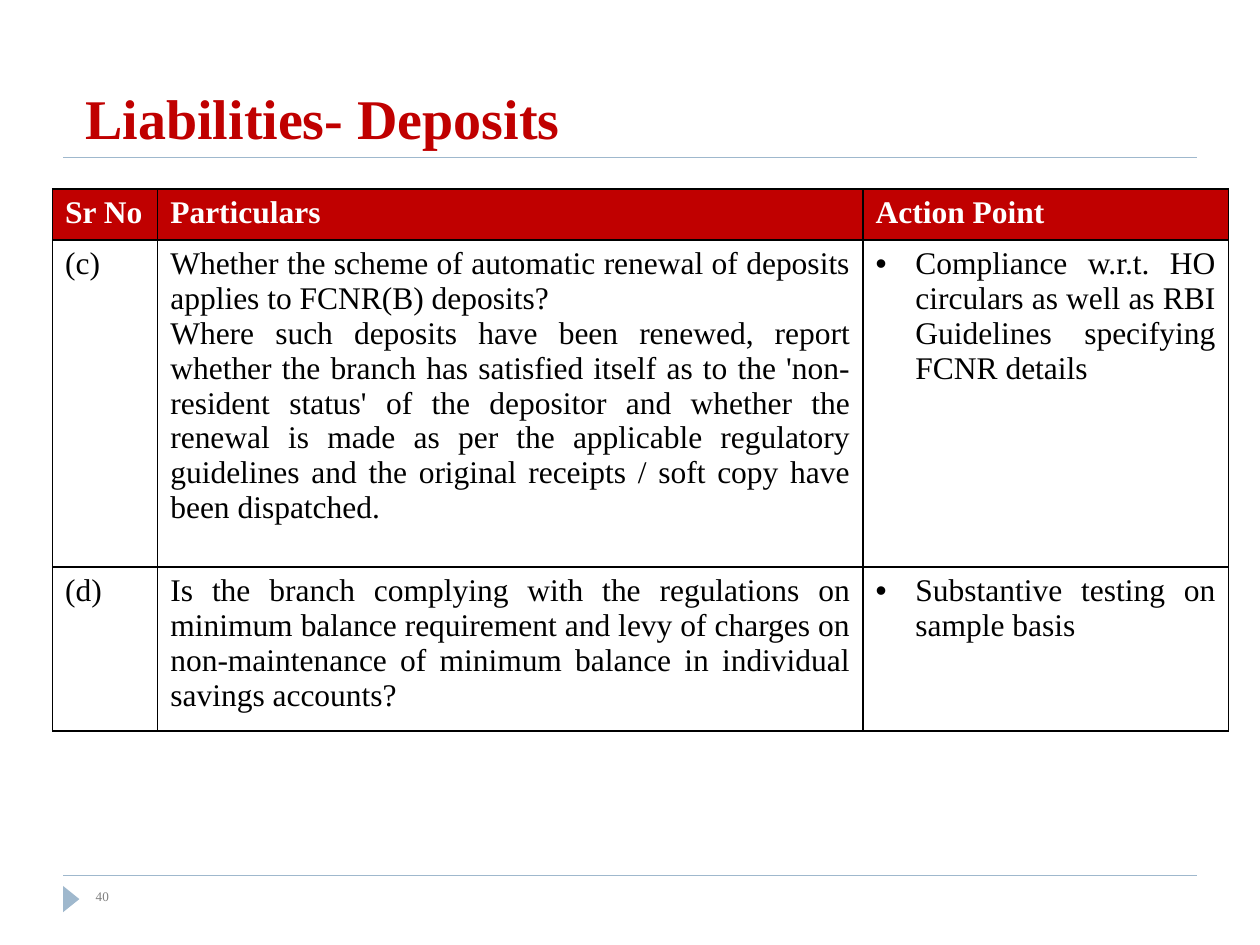
from dataclasses import dataclass

from lxml import etree
from pptx import Presentation
from pptx import util as u
from pptx.dml.color import RGBColor
from pptx.enum import shapes, text
from pptx.oxml import ns


@dataclass(frozen=True)
class Theme:
    font: str = "Times New Roman"
    red: str = "C00000"
    white: str = "FFFFFF"
    black: str = "000000"
    grey: str = "808080"
    rule: str = "9FB8CD"
    title_size: float = 32
    body_size: float = 18
    number_size: float = 7.5


theme = Theme()


def add_run(para, words, size, color, bold=False):
    span = para.add_run()
    span.text = words
    span.font.name = theme.font
    span.font.size = u.Pt(size)
    span.font.bold = bold
    span.font.color.rgb = RGBColor.from_string(color)


def add_borders(cell):
    props = cell._tc.get_or_add_tcPr()
    for side in ("lnL", "lnR", "lnT", "lnB"):
        edge = etree.SubElement(props, ns.qn(f"a:{side}"), w=str(u.Pt(1)))
        fill = etree.SubElement(edge, ns.qn("a:solidFill"))
        etree.SubElement(fill, ns.qn("a:srgbClr"), val=theme.black)


deck = Presentation()
deck.slide_width, deck.slide_height = u.Cm(25.4), u.Cm(19.05)
page = deck.slides.add_slide(deck.slide_layouts[5])

# Rules under the title and above the footer
for y in (17.65, 3.18):
    rule = page.shapes.add_connector(
        shapes.MSO_CONNECTOR.STRAIGHT, u.Cm(1.27), u.Cm(y), u.Cm(24.13), u.Cm(y))
    rule.line.color.rgb = RGBColor.from_string(theme.rule)
    rule.line.width = u.Pt(0.75)
    etree.SubElement(rule._element.spPr, ns.qn("a:effectLst"))

# Footer marker and page number
marker = page.shapes.add_shape(
    shapes.MSO_SHAPE.ISOSCELES_TRIANGLE, u.Cm(1.17), u.Cm(17.96), u.Cm(0.53), u.Cm(0.33))
marker.rotation = 90
marker.shadow.inherit = False
marker.fill.solid()
marker.fill.fore_color.rgb = RGBColor.from_string(theme.rule)
marker.line.fill.background()

number_box = page.shapes.add_textbox(u.Cm(1.68), u.Cm(17.78), u.Cm(11), u.Cm(0.76))
number_box.text_frame.word_wrap = True
add_run(number_box.text_frame.paragraphs[0], "40", theme.number_size, theme.grey)

# Title
title = page.shapes.title
title.left, title.top, title.width, title.height = u.Cm(1.47), u.Cm(0.43), u.Cm(22.86), u.Cm(2.74)
title.text_frame.vertical_anchor = text.MSO_ANCHOR.BOTTOM
title_para = title.text_frame.paragraphs[0]
title_para.alignment = text.PP_ALIGN.LEFT
add_run(title_para, "Liabilities- Deposits", theme.title_size, theme.red, bold=True)

# Table: each cell is a list of paragraphs
rows = [
    [["Sr No"], ["Particulars"], ["Action Point"]],
    [["(c)"],
     ["Whether the scheme of automatic renewal of deposits applies to FCNR(B) deposits?",
      "Where such deposits have been renewed, report whether the branch has satisfied "
      "itself as to the 'non-resident status' of the depositor and whether the renewal "
      "is made as per the applicable regulatory guidelines and the original receipts / "
      "soft copy have been dispatched."],
     ["Compliance w.r.t. HO circulars as well as RBI Guidelines specifying FCNR details"]],
    [["(d)"],
     ["Is the branch complying with the regulations on minimum balance requirement and "
      "levy of charges on non-maintenance of minimum balance in individual savings accounts?"],
     ["Substantive testing on sample basis"]],
]
widths = [2.12, 14.22, 7.36]
heights = [1.03, 6.59, 3.06]
action_column = len(widths) - 1
indent = u.Cm(0.8)

table = page.shapes.add_table(
    len(rows), len(widths), u.Cm(1.06), u.Cm(3.81), u.Cm(sum(widths)), u.Cm(sum(heights))).table
for column, width in zip(table.columns, widths):
    column.width = u.Cm(width)
for row, height in zip(table.rows, heights):
    row.height = u.Cm(height)

for r, row in enumerate(rows):
    header = r == 0
    for c, paragraphs in enumerate(row):
        cell = table.cell(r, c)
        add_borders(cell)
        if header:
            cell.fill.solid()
            cell.fill.fore_color.rgb = RGBColor.from_string(theme.red)
        else:
            cell.fill.background()
        for i, words in enumerate(paragraphs):
            frame = cell.text_frame
            para = frame.paragraphs[0] if i == 0 else frame.add_paragraph()
            para.alignment = text.PP_ALIGN.JUSTIFY
            if c == action_column and not header:
                props = para._p.get_or_add_pPr()
                props.set("marL", str(indent))
                props.set("indent", str(-indent))
                etree.SubElement(props, ns.qn("a:buFont"), typeface="Arial")
                etree.SubElement(props, ns.qn("a:buChar"), char="•")
            add_run(para, words, theme.body_size,
                    theme.white if header else theme.black, bold=header)

deck.save("out.pptx")
